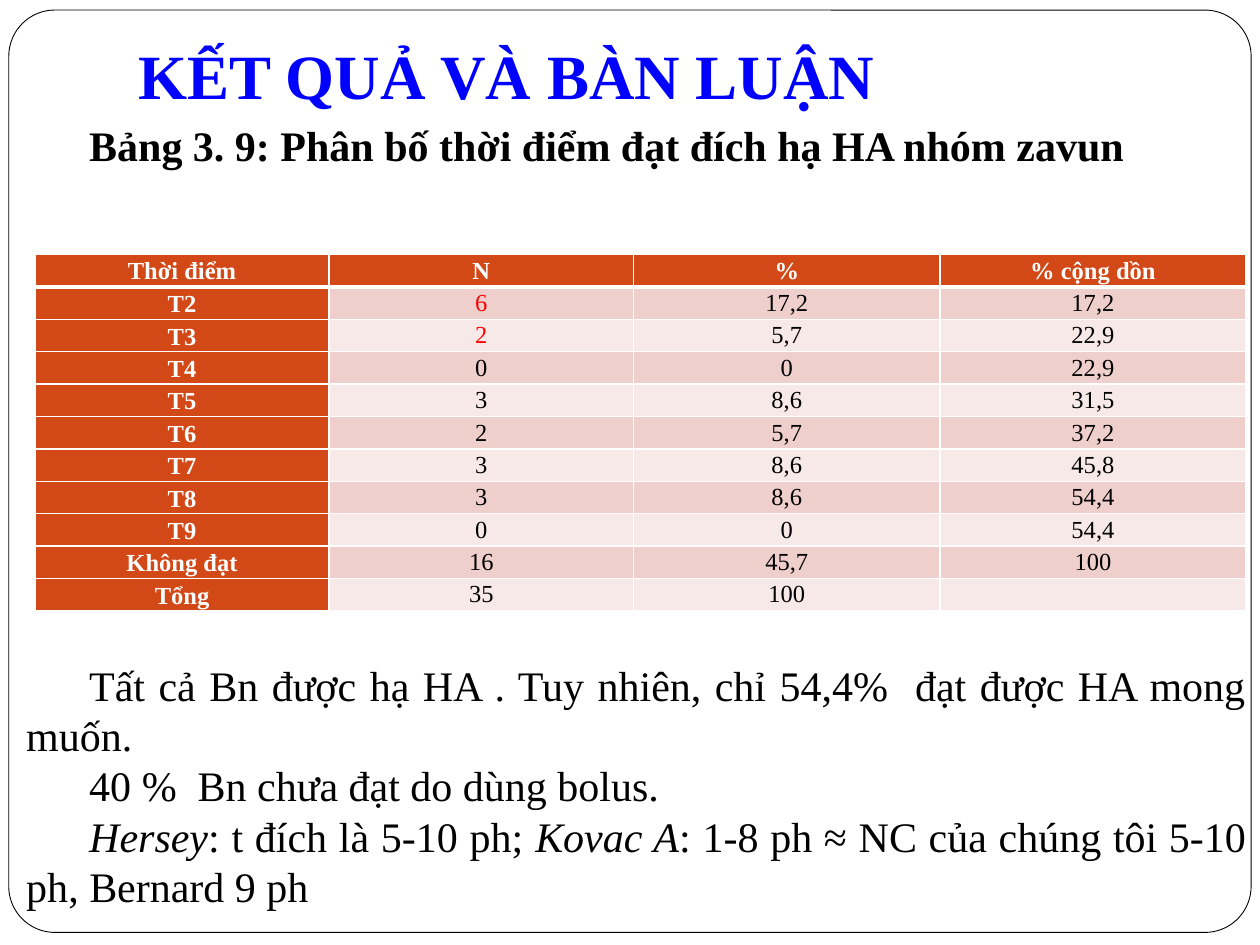
import pptx
import pptx.util
import pptx.dml.color
import pptx.enum.shapes
import pptx.enum.text
import pptx.oxml
import pptx.oxml.ns
from pptx.util import Inches, Pt

RGBColor = pptx.dml.color.RGBColor
ALIGN = pptx.enum.text.PP_ALIGN
ANCHOR = pptx.enum.text.MSO_ANCHOR

FONT = "Times New Roman"
WHITE = RGBColor(0xFF, 0xFF, 0xFF)
BLACK = RGBColor(0x00, 0x00, 0x00)
BLUE = RGBColor(0x00, 0x00, 0xFF)
RED = RGBColor(0xFF, 0x00, 0x00)
ORANGE = RGBColor(0xD3, 0x48, 0x17)
BANDS = [RGBColor(0xF7, 0xE9, 0xE8), RGBColor(0xEF, 0xCF, 0xCC)]

HEADER = ["Thời điểm", "N", "%", "% cộng dồn"]
ROWS = [
    HEADER,
    ["T2", "6", "17,2", "17,2"],
    ["T3", "2", "5,7", "22,9"],
    ["T4", "0", "0", "22,9"],
    ["T5", "3", "8,6", "31,5"],
    ["T6", "2", "5,7", "37,2"],
    ["T7", "3", "8,6", "45,8"],
    ["T8", "3", "8,6", "54,4"],
    ["T9", "0", "0", "54,4"],
    ["Không đạt", "16", "45,7", "100"],
    ["Tổng", "35", "100", ""],
]
COLUMN_WIDTHS = [2.33, 2.42, 2.43, 2.43]
ROW_HEIGHT = 0.25

# Each paragraph is a list of (text, italic) runs.
COMMENTS = [
    [("Tất cả Bn được hạ HA . Tuy nhiên, chỉ 54,4%  đạt được HA mong muốn.", False)],
    [("40 %  Bn chưa đạt do dùng bolus.", False)],
    [
        ("Hersey", True),
        (": t đích là 5-10 ph; ", False),
        ("Kovac A", True),
        (": 1-8 ph ≈ NC của chúng tôi 5-10 ph, Bernard 9 ph", False),
    ],
]


def add_text(left, top, width, height, paragraphs, size, color, bold, anchor, indented):
    """Add a wrapped text box; indented paragraphs are justified, first line 0.5 inch in."""
    box = slide.shapes.add_textbox(Inches(left), Inches(top), Inches(width), Inches(height))
    frame = box.text_frame
    frame.word_wrap = True
    frame.vertical_anchor = anchor
    for index, runs in enumerate(paragraphs):
        paragraph = frame.add_paragraph() if index else frame.paragraphs[0]
        paragraph.font.name = FONT
        paragraph.font.size = Pt(size)
        paragraph.font.bold = bold
        paragraph.font.color.rgb = color
        if indented:
            paragraph.alignment = ALIGN.JUSTIFY
            properties = paragraph._p.get_or_add_pPr()
            properties.set("marL", "0")
            properties.set("indent", str(Inches(0.5)))
        for text, italic in runs:
            run = paragraph.add_run()
            run.text = text
            if italic:
                run.font.italic = True
    return frame


def set_borders(cell, bottom_width):
    """Draw white cell borders, 1 pt except for the bottom one."""
    properties = cell._tc.get_or_add_tcPr()
    widths = {"lnL": 1, "lnR": 1, "lnT": 1, "lnB": bottom_width}
    for position, (side, width) in enumerate(widths.items()):
        border = pptx.oxml.parse_xml(
            f'<a:{side} {pptx.oxml.ns.nsdecls("a")} w="{Pt(width)}">'
            f'<a:solidFill><a:srgbClr val="{WHITE}"/></a:solidFill></a:{side}>'
        )
        properties.insert(position, border)


presentation = pptx.Presentation()
presentation.slide_width = Inches(10)
presentation.slide_height = Inches(7.5)
slide = presentation.slides.add_slide(presentation.slide_layouts[6])

frame_shape = slide.shapes.add_shape(
    pptx.enum.shapes.MSO_SHAPE.ROUNDED_RECTANGLE,
    Inches(0.07), Inches(0.08), Inches(9.86), Inches(7.32),
)
frame_shape.adjustments[0] = 0.05
frame_shape.shadow.inherit = False
frame_shape.fill.solid()
frame_shape.fill.fore_color.rgb = WHITE
frame_shape.line.color.rgb = BLACK
frame_shape.line.width = Pt(0.5)

title_frame = add_text(1, 0.3, 8.5, 0.69, [[("KẾT QUẢ VÀ BÀN LUẬN", False)]],
                       36, BLUE, True, ANCHOR.BOTTOM, False)
title_frame.margin_bottom = Inches(0.1)

table = slide.shapes.add_table(
    len(ROWS), len(HEADER), Inches(0.28), Inches(2.02),
    Inches(sum(COLUMN_WIDTHS)), Inches(ROW_HEIGHT * len(ROWS)),
).table
for column, width in zip(table.columns, COLUMN_WIDTHS):
    column.width = Inches(width)
for row_index, values in enumerate(ROWS):
    table.rows[row_index].height = Inches(ROW_HEIGHT)
    for column_index, value in enumerate(values):
        cell = table.cell(row_index, column_index)
        is_heading = row_index == 0 or column_index == 0
        is_highlighted = column_index == 1 and row_index in (1, 2)
        cell.margin_left = cell.margin_right = Inches(0.07)
        cell.margin_top = cell.margin_bottom = 0
        if column_index == 0 and row_index > 0:
            cell.vertical_anchor = ANCHOR.MIDDLE
        cell.fill.solid()
        cell.fill.fore_color.rgb = ORANGE if is_heading else BANDS[row_index % 2]
        set_borders(cell, 3 if row_index == 0 else 1)
        cell.text = value
        paragraph = cell.text_frame.paragraphs[0]
        paragraph.alignment = ALIGN.CENTER
        paragraph.line_spacing = 1.1
        paragraph.space_before = Pt(5)
        paragraph.font.name = FONT
        paragraph.font.size = Pt(14)
        paragraph.font.bold = is_heading
        paragraph.font.color.rgb = WHITE if is_heading else RED if is_highlighted else BLACK

add_text(0.11, 5.17, 9.88, 2.12, COMMENTS, 24, BLACK, False, ANCHOR.MIDDLE, True)
add_text(0.11, 0.9, 9.13, 0.5,
         [[("Bảng 3. 9: Phân bố thời điểm đạt đích hạ HA nhóm zavun", False)]],
         24, BLACK, True, ANCHOR.TOP, True)

presentation.save("out.pptx")
